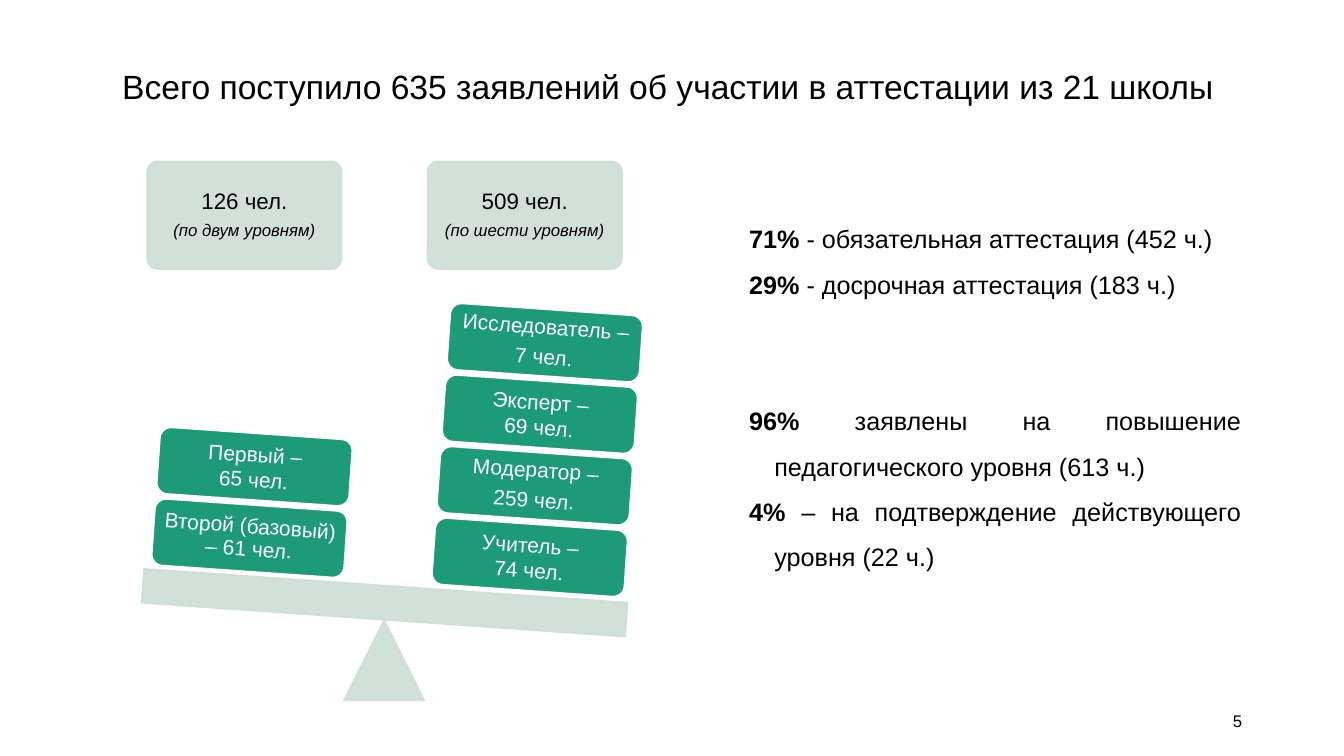
import pptx
import pptx.util
import pptx.dml.color
import pptx.enum.shapes
import pptx.enum.text
import pptx.oxml
import pptx.oxml.ns

Inches = pptx.util.Inches
Pt = pptx.util.Pt
RGBColor = pptx.dml.color.RGBColor
SHAPE = pptx.enum.shapes.MSO_SHAPE
ALIGN = pptx.enum.text.PP_ALIGN
ANCHOR = pptx.enum.text.MSO_ANCHOR

BLACK = RGBColor(0x00, 0x00, 0x00)
WHITE = RGBColor(0xFF, 0xFF, 0xFF)
GREEN = RGBColor(0x1D, 0x9A, 0x78)
PALE = RGBColor(0xCD, 0xDE, 0xD6)

HEADING = "Всего поступило 635 заявлений об участии в аттестации из 21 школы"
PAGE = "5"
LOOSE = {"line": 0.9, "after": 0.35}
TIGHT = {}

PANS = [
    {
        "card_left": 1.46,
        "total": "126 чел.",
        "note": "(по двум уровням)",
        "base": (1.52, 5.01),
        "levels": [
            (["Второй (базовый) – 61 чел."], LOOSE),
            (["Первый –", "65 чел."], TIGHT),
        ],
    },
    {
        "card_left": 4.24,
        "total": "509 чел.",
        "note": "(по шести уровням)",
        "base": (4.3, 5.2),
        "levels": [
            (["Учитель –", "74 чел."], TIGHT),
            (["Модератор –", "259 чел."], LOOSE),
            (["Эксперт –", "69 чел."], TIGHT),
            (["Исследователь –", "7 чел."], LOOSE),
        ],
    },
]

SHARES = [
    ("71% ", "- обязательная аттестация (452 ч.)", 0),
    ("29% ", "- досрочная аттестация (183 ч.)", 0),
    ("96% ", "заявлены на повышение педагогического уровня (613 ч.)", 65),
    ("4% ", "– на подтверждение действующего уровня (22 ч.)", 0),
]

TILT = 4
LEVEL_STEP = (0.05, -0.71)


def write(paragraph, text, size=15, color=BLACK, bold=False, italic=False,
          align=ALIGN.CENTER, line=1.0, before=0, after=0):
    paragraph.alignment = align
    paragraph.line_spacing = line
    paragraph.space_before = Pt(before)
    paragraph.space_after = Pt(size * after)
    run = paragraph.add_run()
    run.text = text
    run.font.name = "Arial"
    run.font.size = Pt(size)
    run.font.color.rgb = color
    run.font.bold = bold
    run.font.italic = italic


def paragraph_at(frame, index):
    return frame.add_paragraph() if index else frame.paragraphs[0]


def prepare(frame, anchor, inset=None):
    frame.word_wrap = True
    frame.auto_size = pptx.enum.text.MSO_AUTO_SIZE.NONE
    frame.vertical_anchor = anchor
    if inset is not None:
        frame.margin_left = frame.margin_right = Inches(inset)
        frame.margin_top = frame.margin_bottom = Inches(inset)
    return frame


def place(part, left, top, width, height):
    part.left, part.top = Inches(left), Inches(top)
    part.width, part.height = Inches(width), Inches(height)


def add_part(slide, kind, box, fill, outline, rotation=0, opacity=None):
    part = slide.shapes.add_shape(kind, *map(Inches, box))
    part.shadow.inherit = False
    part.rotation = rotation
    part.fill.solid()
    part.fill.fore_color.rgb = fill
    part.line.color.rgb = outline
    part.line.width = Pt(1)
    if opacity is not None:
        for color in part._element.spPr.iter(pptx.oxml.ns.qn("a:srgbClr")):
            color.append(pptx.oxml.parse_xml(
                f'<a:alpha {pptx.oxml.ns.nsdecls("a")} val="{opacity * 1000}"/>'))
    return part


def add_pale(slide, kind, box, rotation=0):
    return add_part(slide, kind, box, PALE, PALE, rotation, opacity=90)


def add_pan(slide, pan):
    card = add_pale(slide, SHAPE.ROUNDED_RECTANGLE, (pan["card_left"], 1.6, 1.93, 1.07))
    card.adjustments[0] = 0.1
    frame = prepare(card.text_frame, ANCHOR.MIDDLE, 0.07)
    write(paragraph_at(frame, 0), pan["total"], size=16, **LOOSE)
    write(paragraph_at(frame, 1), pan["note"], size=12, italic=True, **LOOSE)

    left, top = pan["base"]
    step_x, step_y = LEVEL_STEP
    for height, (lines, spacing) in enumerate(pan["levels"]):
        box = (left + height * step_x, top + height * step_y, 1.91, 0.66)
        level = add_part(slide, SHAPE.ROUNDED_RECTANGLE, box, GREEN, WHITE, TILT)
        frame = prepare(level.text_frame, ANCHOR.MIDDLE, 0.06)
        for index, text in enumerate(lines):
            write(paragraph_at(frame, index), text, color=WHITE, **spacing)


def add_shares(body):
    place(body, 7.33, 2.02, 5.08, 3.93)
    frame = prepare(body.text_frame, ANCHOR.TOP)
    for index, (share, meaning, gap) in enumerate(SHARES):
        paragraph = paragraph_at(frame, index)
        for text, bold in ((share, True), (meaning, False)):
            write(paragraph, text, size=18, bold=bold, align=ALIGN.JUSTIFY,
                  line=1.5, before=gap)
        properties = paragraph._p.get_or_add_pPr()
        properties.set("marL", str(Inches(0.25)))
        properties.set("indent", str(Inches(-0.25)))
        properties.append(pptx.oxml.parse_xml(
            f'<a:buNone {pptx.oxml.ns.nsdecls("a")}/>'))


def main():
    deck = pptx.Presentation()
    deck.slide_width, deck.slide_height = Inches(13.33), Inches(7.5)
    slide = deck.slides.add_slide(deck.slide_layouts[1])

    heading = slide.shapes.title
    place(heading, 0.51, 0.6, 12.23, 0.5)
    write(prepare(heading.text_frame, ANCHOR.MIDDLE).paragraphs[0], HEADING, size=24)

    add_shares(slide.placeholders[1])

    add_pale(slide, SHAPE.ISOSCELES_TRIANGLE, (3.41, 6.15, 0.8, 0.8))
    add_pale(slide, SHAPE.RECTANGLE, (1.41, 5.81, 4.81, 0.34), TILT)
    for pan in PANS:
        add_pan(slide, pan)

    page = slide.shapes.add_textbox(*map(Inches, (9.42, 6.95, 3, 0.4)))
    write(prepare(page.text_frame, ANCHOR.MIDDLE).paragraphs[0], PAGE,
          size=12, align=ALIGN.RIGHT)

    deck.save("out.pptx")


if __name__ == "__main__":
    main()
